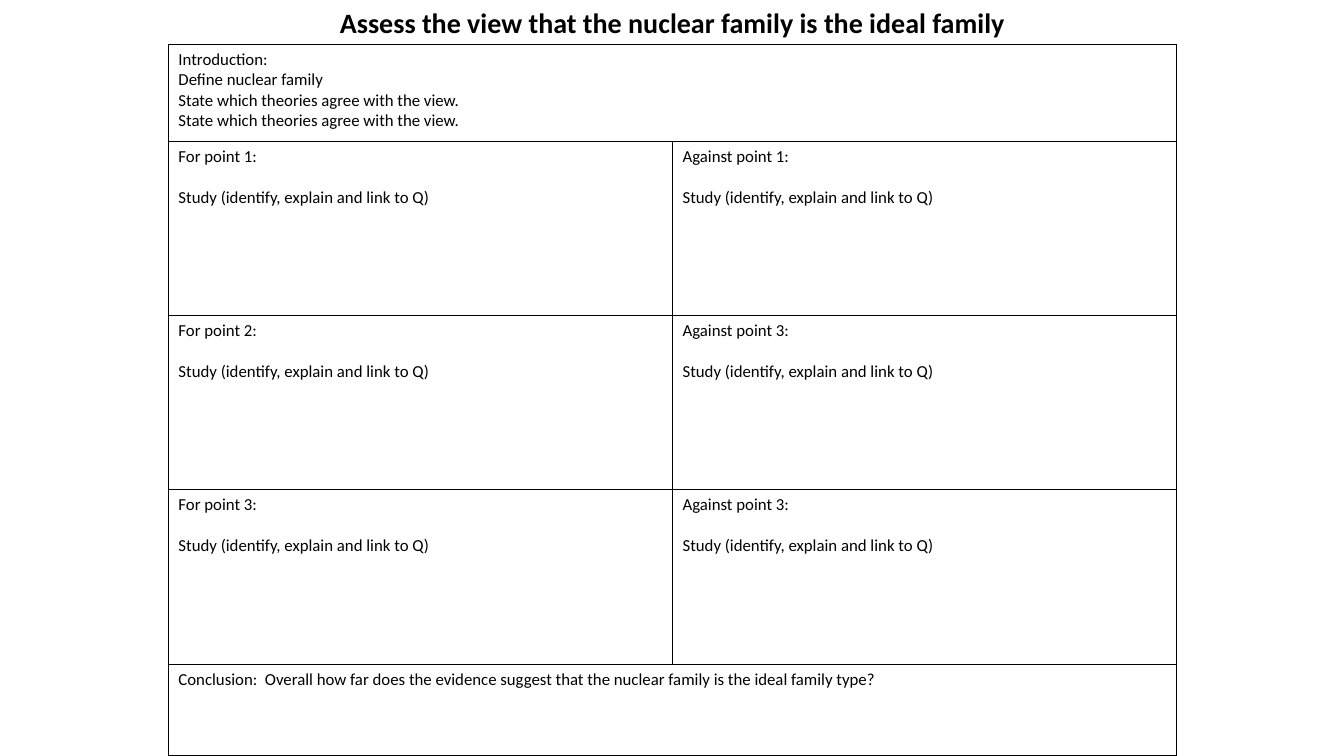
from lxml import etree
from pptx import Presentation
from pptx import util as u
from pptx.dml.color import RGBColor
from pptx.enum import text as t
from pptx.oxml import ns

COLORS = {"ink": "000000"}
FONT = "Calibri"
LEFT, WIDTH, TITLE_HEIGHT = 1.67, 10, 0.44
INTRO_HEIGHT, POINT_HEIGHT, CONCLUSION_HEIGHT = 0.96, 1.73, 0.91

QUESTION = "Assess the view that the nuclear family is the ideal family"
INTRODUCTION = [
    "Introduction:",
    "Define nuclear family",
    "State which theories agree with the view.",
    "State which theories agree with the view.",
]
POINTS = [
    ("For point 1:", "Against point 1:"),
    ("For point 2:", "Against point 3:"),
    ("For point 3:", "Against point 3:"),
]
STUDY = "Study (identify, explain and link to Q)"
CONCLUSION = (
    "Conclusion:  Overall how far does the evidence suggest "
    "that the nuclear family is the ideal family type?"
)


def write(frame, lines, size=12, bold=False, align=t.PP_ALIGN.LEFT, gap=0):
    for index, line in enumerate(lines):
        paragraph = frame.add_paragraph() if index else frame.paragraphs[0]
        paragraph.alignment = align
        paragraph.space_before = u.Pt(gap if index else 0)
        run = paragraph.add_run()
        run.text = line
        run.font.name = FONT
        run.font.size = u.Pt(size)
        run.font.bold = bold
        run.font.color.rgb = RGBColor.from_string(COLORS["ink"])


def outline(cell, points=1):
    cell.fill.background()
    properties = cell._tc.get_or_add_tcPr()
    for index, side in enumerate(("lnL", "lnR", "lnT", "lnB")):
        border = etree.Element(ns.qn(f"a:{side}"), w=str(u.Pt(points)))
        fill = etree.SubElement(border, ns.qn("a:solidFill"))
        etree.SubElement(fill, ns.qn("a:srgbClr"), val=COLORS["ink"])
        properties.insert(index, border)


def add_question(slide):
    question = slide.shapes.title
    question.left, question.top = u.Inches(LEFT), u.Inches(0)
    question.width, question.height = u.Inches(WIDTH), u.Inches(TITLE_HEIGHT)
    frame = question.text_frame
    frame.word_wrap = True
    frame.auto_size = t.MSO_AUTO_SIZE.NONE
    frame.vertical_anchor = t.MSO_ANCHOR.MIDDLE
    write(frame, [QUESTION], size=20, bold=True, align=t.PP_ALIGN.CENTER)


def add_essay_plan(slide):
    heights = [INTRO_HEIGHT] + [POINT_HEIGHT] * len(POINTS) + [CONCLUSION_HEIGHT]
    plan = slide.shapes.add_table(
        len(heights), 2, u.Inches(LEFT), u.Inches(TITLE_HEIGHT),
        u.Inches(WIDTH), u.Inches(sum(heights)),
    ).table
    plan.first_row = plan.horz_banding = False
    for row, height in zip(plan.rows, heights):
        row.height = u.Inches(height)
    for cell in plan.iter_cells():
        outline(cell)

    last = len(heights) - 1
    for row, lines in ((0, INTRODUCTION), (last, [CONCLUSION])):
        plan.cell(row, 0).merge(plan.cell(row, 1))
        write(plan.cell(row, 0).text_frame, lines)
    for row, headings in enumerate(POINTS, 1):
        for column, heading in enumerate(headings):
            write(plan.cell(row, column).text_frame, [heading, STUDY], gap=14.65)


def main():
    deck = Presentation()
    deck.slide_width, deck.slide_height = u.Inches(13.33), u.Inches(7.5)
    slide = deck.slides.add_slide(deck.slide_layouts[5])
    add_question(slide)
    add_essay_plan(slide)
    deck.save("out.pptx")


if __name__ == "__main__":
    main()
